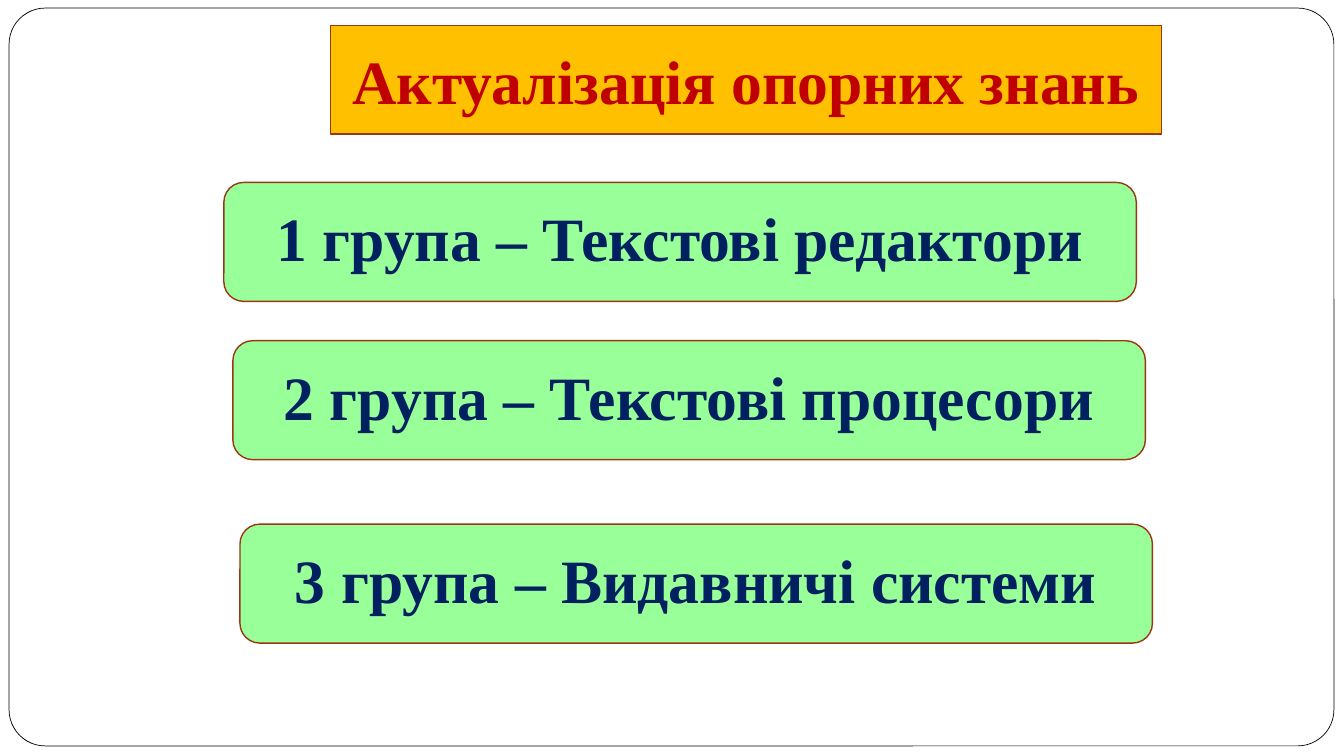
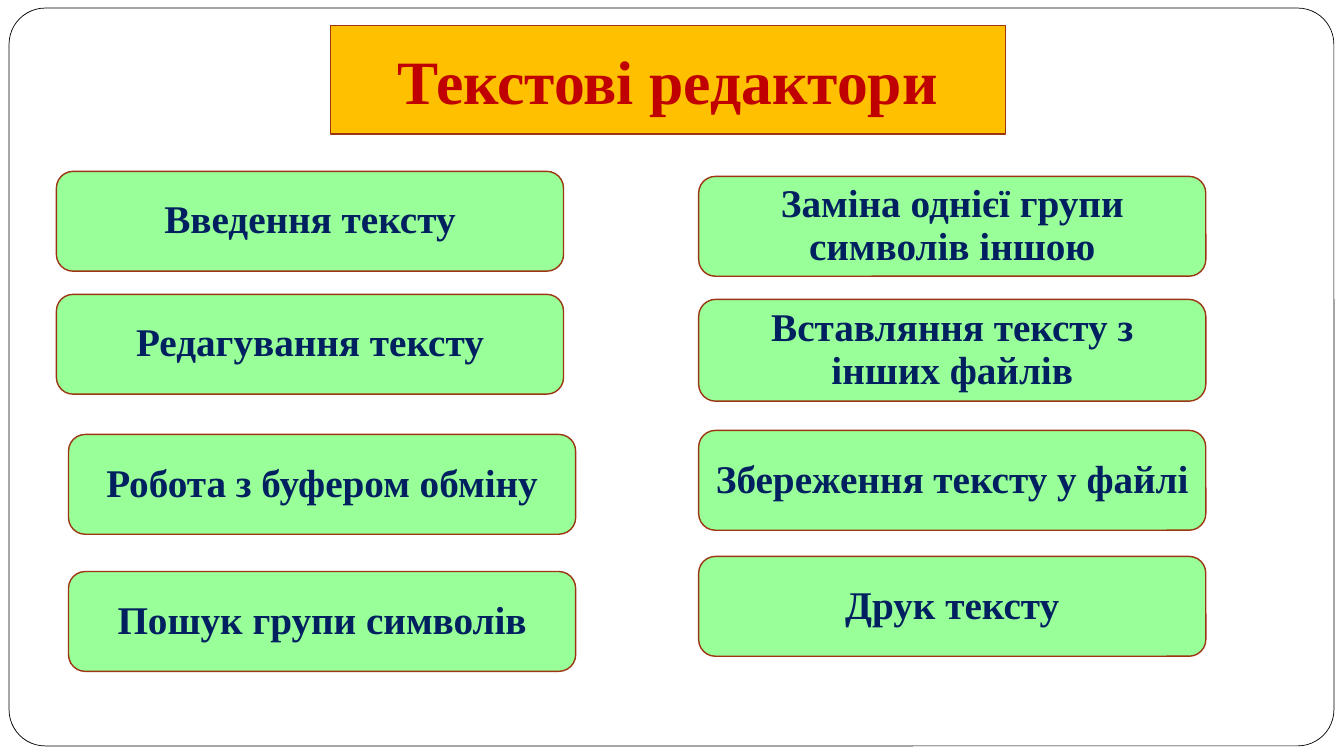
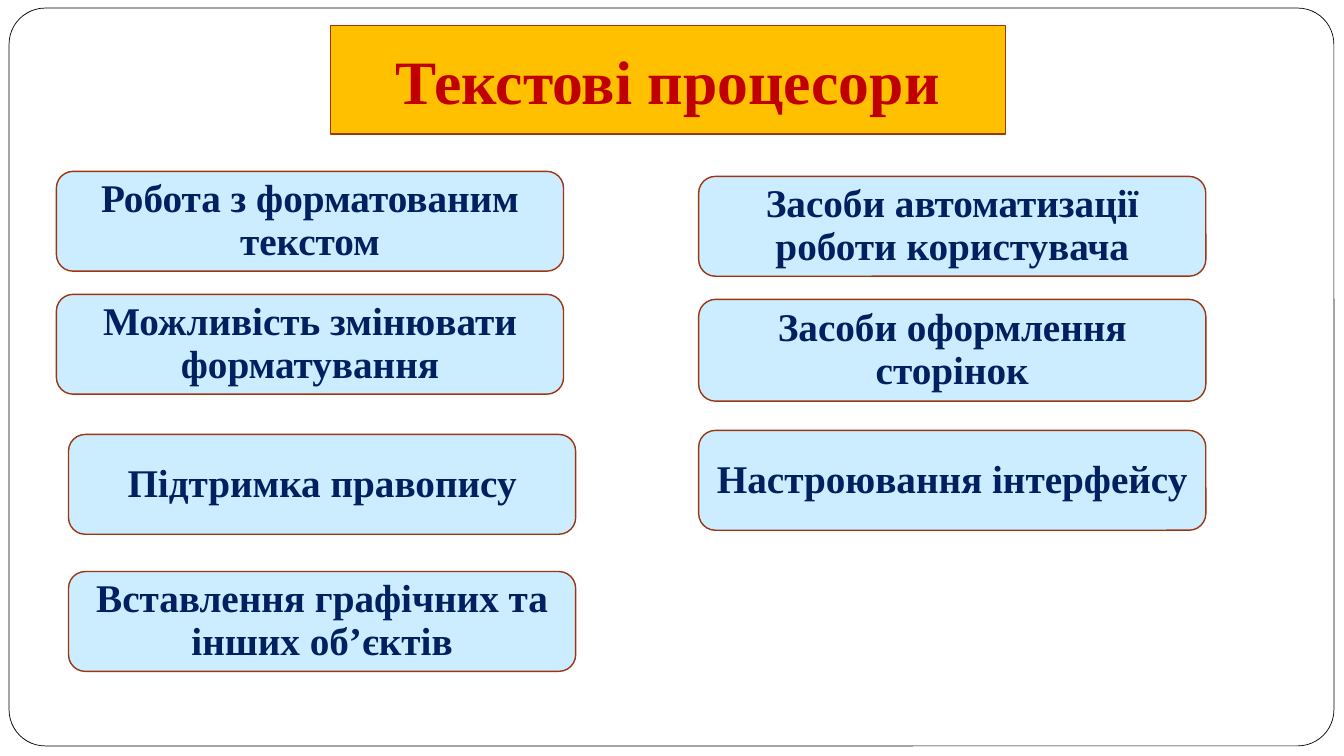
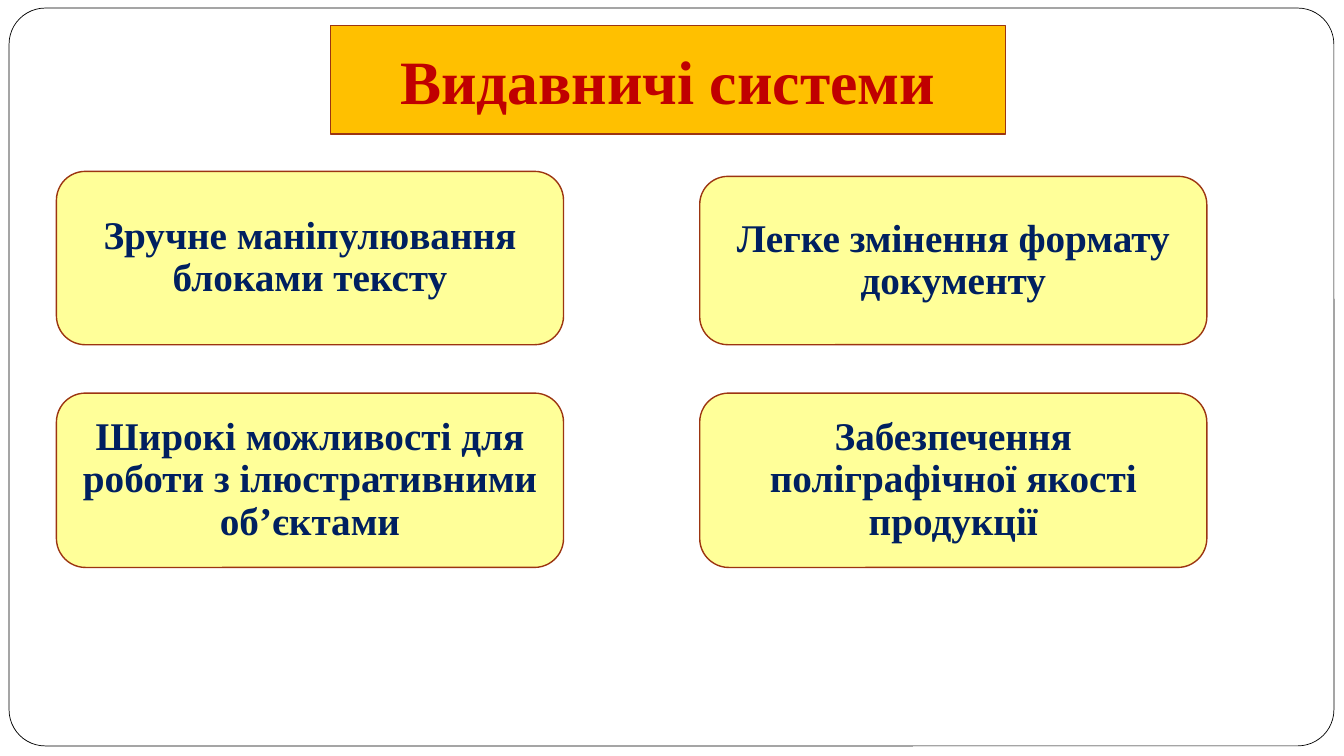
from lxml import etree
from pptx import Presentation
from pptx.dml.color import RGBColor
from pptx.enum.shapes import MSO_SHAPE
from pptx.enum.text import MSO_ANCHOR, MSO_AUTO_SIZE, PP_ALIGN
from pptx.oxml.ns import qn
from pptx.util import Inches, Pt

ROUNDED = MSO_SHAPE.ROUNDED_RECTANGLE
MIDDLE = MSO_ANCHOR.MIDDLE
NO_FIT = MSO_AUTO_SIZE.NONE
CENTER = PP_ALIGN.CENTER

FONT = "Times New Roman"
COLORS = {
    "white": "FFFFFF", "black": "000000", "edge": "9C3511",
    "banner": "FFC000", "title": "C00000", "text": "002060",
    "green": "99FF99", "blue": "CCECFF", "yellow": "FFFF99",
}
TITLE_ONLY = 5

# Boxes as (left, top, width, height), in inches
FRAME = (0.09, 0.08, 13.14, 7.32)
WIDE_BANNER = (3.28, 0.25, 8.24, 1.08)
BANNER = (3.28, 0.25, 6.69, 1.08)
CARD_W = 5.03
GROUP_BOXES = [(x, y, 9.05, 1.18)
               for x, y in ((2.22, 1.81), (2.31, 3.38), (2.38, 5.2))]
FEATURE_BOXES = [(x, y, CARD_W, h) for x, y, h in (
    (0.56, 1.7, 0.99), (0.56, 2.92, 0.99), (0.68, 4.31, 0.99), (0.68, 5.67, 0.99),
    (6.93, 1.75, 0.99), (6.93, 2.97, 1.01), (6.93, 4.27, 0.99), (6.93, 5.52, 0.99))]
TALL_BOXES = [(x, y, CARD_W, h) for x, y, h in (
    (0.56, 1.7, 1.72), (0.56, 3.9, 1.73), (6.94, 1.75, 1.67), (6.94, 3.9, 1.73))]

# Title, banner box, card fill, card text size, card boxes, card texts
SLIDES = [
    ("Актуалізація опорних знань", WIDE_BANNER, "green", 44, GROUP_BOXES, [
        "1 група – Текстові редактори",
        "2 група – Текстові процесори",
        "3 група – Видавничі системи"]),
    ("Текстові редактори", BANNER, "green", 28, FEATURE_BOXES, [
        "Введення тексту",
        "Редагування тексту",
        "Робота з буфером обміну",
        "Пошук групи символів",
        "Заміна однієї групи символів іншою",
        "Вставляння тексту з інших файлів",
        "Збереження тексту у файлі",
        "Друк тексту"]),
    ("Текстові процесори", BANNER, "blue", 28, FEATURE_BOXES, [
        "Робота з форматованим текстом",
        "Можливість змінювати форматування",
        "Підтримка правопису",
        "Вставлення графічних та інших об’єктів",
        "Засоби автоматизації роботи користувача",
        "Засоби оформлення сторінок",
        "Настроювання інтерфейсу"]),
    ("Видавничі системи", BANNER, "yellow", 28, TALL_BOXES, [
        "Зручне маніпулювання блоками тексту",
        "Широкі можливості для роботи з ілюстративними об’єктами",
        "Легке змінення формату документу",
        "Забезпечення поліграфічної якості продукції"]),
]


def rgb(name):
    return RGBColor.from_string(COLORS[name])


def paint(sp, fill, line, width):
    sp.fill.solid()
    sp.fill.fore_color.rgb = rgb(fill)
    sp.line.color.rgb = rgb(line)
    sp.line.width = Pt(width)


def set_text(sp, text, size=28, color="text", spacing=0.9):
    tf = sp.text_frame
    tf.word_wrap = True
    tf.auto_size = NO_FIT
    tf.vertical_anchor = MIDDLE
    p = tf.paragraphs[0]
    p.alignment = CENTER
    p.line_spacing = spacing
    r = p.add_run()
    r.text = text
    r.font.name = FONT
    r.font.size = Pt(size)
    r.font.bold = True
    r.font.color.rgb = rgb(color)


def add_rounded(slide, box, fill, line="edge", width=1):
    sp = slide.shapes.add_shape(ROUNDED, *map(Inches, box))
    sp.shadow.inherit = False
    paint(sp, fill, line, width)
    return sp


def add_master_frame(prs, slide):
    """Draw the page frame and move it to the back of the slide master."""
    sp = add_rounded(slide, FRAME, "white", "black", 0.5)
    sp.adjustments[0] = 0.049
    sp._element.nvSpPr.cNvPr.set("id", "100")
    prs.slide_master.shapes._spTree.insert(2, sp._element)


def format_title(slide, text, box):
    """Turn the title placeholder into a banner with snipped top corners."""
    sp = slide.shapes.title
    sp.left, sp.top, sp.width, sp.height = map(Inches, box)
    geom = etree.SubElement(sp._element.spPr, qn("a:prstGeom"), prst="snip2SameRect")
    etree.SubElement(geom, qn("a:avLst"))
    paint(sp, "banner", "edge", 1)
    set_text(sp, text, size=44, color="title", spacing=1.0)


def add_cards(slide, boxes, texts, fill, size):
    for box, text in zip(boxes, texts):
        set_text(add_rounded(slide, box, fill), text, size=size)


def main():
    prs = Presentation()
    prs.slide_width, prs.slide_height = Inches(13.33), Inches(7.5)
    for i, (title, banner, fill, size, boxes, texts) in enumerate(SLIDES):
        slide = prs.slides.add_slide(prs.slide_layouts[TITLE_ONLY])
        if i == 0:
            add_master_frame(prs, slide)
        format_title(slide, title, banner)
        add_cards(slide, boxes, texts, fill, size)
    prs.save("out.pptx")


if __name__ == "__main__":
    main()
